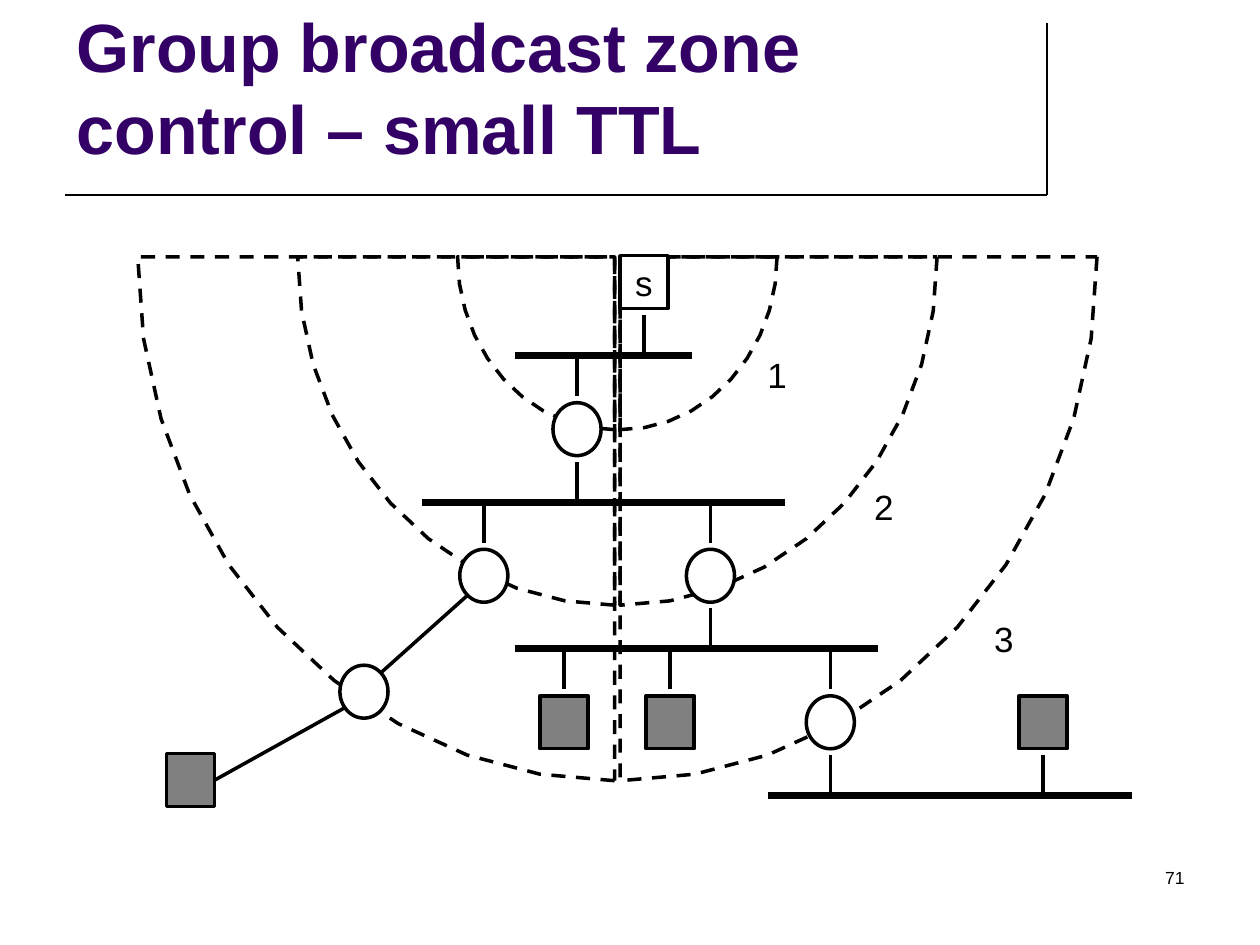
import math
import pptx
import pptx.util
import pptx.dml.color
import pptx.enum.dml
import pptx.enum.shapes
import pptx.enum.text
import pptx.oxml
import pptx.oxml.ns

Pt = pptx.util.Pt
RGB = pptx.dml.color.RGBColor
SHAPE = pptx.enum.shapes.MSO_SHAPE
ALIGN = pptx.enum.text.PP_ALIGN
ANCHOR = pptx.enum.text.MSO_ANCHOR
FIT = pptx.enum.text.MSO_AUTO_SIZE

BLACK = RGB(0x00, 0x00, 0x00)
WHITE = RGB(0xFF, 0xFF, 0xFF)
GRAY = RGB(0x80, 0x80, 0x80)
PURPLE = RGB(0x33, 0x00, 0x66)

NODE_W, NODE_H = 27.5, 30.25
BAR_TOP, STEP = 203.25, 83.75  # first network bar, gap between bars
DROP = 42                      # bar to node centre
NEAR, FAR = 1.5, 23.25         # ends of a stub, measured from its bar
CUTS = 10                      # straight pieces in a zone's arc

# Network bars: left, right
BARS = [(294.5, 395.25), (241, 448.5), (294.5, 502), (439, 646.75)]
# Stubs: x, bar index, direction (-1 up, 1 down)
STUBS = [(368, 0, -1), (329.75, 0, 1), (329.75, 1, -1), (276.5, 1, 1),
         (406, 1, 1), (406, 2, -1), (322.25, 2, 1), (383, 2, 1),
         (474.5, 2, 1), (474.5, 3, -1), (596, 3, -1)]
# Routers and hosts hanging below a bar: x, bar index
ROUTERS = [(329.75, 0), (276.5, 1), (406, 1), (474.5, 2)]
HOSTS = [(322.25, 2), (383, 2), (596, 2)]


def apply(obj, vals):
    for key, val in vals.items():
        setattr(obj, key, val)


def bar_y(row):
    return BAR_TOP + STEP * row


def write(shape, text, size, color=BLACK, bold=False, align=ALIGN.CENTER,
          **frame):
    box = shape.text_frame
    apply(box, {"text": text, **frame})
    para = box.paragraphs[0]
    para.alignment = align
    apply(para.font, {"name": "Arial", "size": Pt(size), "bold": bold})
    para.font.color.rgb = color


def label(slide, text, x, y, w, h, size, **form):
    box = slide.shapes.add_textbox(Pt(x), Pt(y), Pt(w), Pt(h))
    write(box, text, size, **form)


def wire(slide, x1, y1, x2, y2, width=2):
    line = slide.shapes.add_connector(
        pptx.enum.shapes.MSO_CONNECTOR.STRAIGHT,
        Pt(x1), Pt(y1), Pt(x2), Pt(y2))
    line.line.color.rgb = BLACK
    line.line.width = Pt(width)
    line._element.spPr.append(pptx.oxml.parse_xml(
        "<a:effectLst %s/>" % pptx.oxml.ns.nsdecls("a")))
    return line


def node(slide, kind, x, y, fill):
    shape = slide.shapes.add_shape(
        kind, Pt(x - NODE_W / 2), Pt(y - NODE_H / 2), Pt(NODE_W), Pt(NODE_H))
    shape.shadow.inherit = False
    shape.fill.solid()
    shape.fill.fore_color.rgb = fill
    shape.line.color.rgb = BLACK
    shape.line.width = Pt(2)
    return shape


def zone(slide, ring, side):
    """Dashed quarter sector; side is -1 for left, 1 for right."""
    x, y = 352.8 + 1.6 * side, 146.75
    wide, high = (91.4 * ring - 1.7) * side, 100.3 * ring - 1.5
    turns = [math.pi / 2 * i / CUTS for i in range(CUTS + 1)]
    arc = [(Pt(x + wide * math.cos(t)), Pt(y + high * math.sin(t)))
           for t in turns][::side]
    edge = slide.shapes.build_freeform(*arc[0], scale=1.0)
    edge.add_line_segments(arc[1:] + [(Pt(x), Pt(y))], close=True)
    shape = edge.convert_to_shape()
    shape.shadow.inherit = False
    shape.fill.background()
    shape.line.color.rgb = BLACK
    apply(shape.line, {"width": Pt(2),
                       "dash_style": pptx.enum.dml.MSO_LINE.DASH})


def main():
    deck = pptx.Presentation()
    apply(deck, {"slide_width": Pt(720), "slide_height": Pt(540)})
    slide = deck.slides.add_slide(deck.slide_layouts[5])

    # Title with its frame lines, and page number
    wire(slide, 598.5, 13, 598.5, 111.25, 1)
    wire(slide, 37, 111.25, 598.5, 111.25, 1)
    title = slide.shapes.title
    apply(title, {"left": Pt(36.5), "top": Pt(9), "width": Pt(561),
                  "height": Pt(90.75)})
    write(title, "Group broadcast zone control – small TTL", 39, PURPLE, True,
          ALIGN.LEFT, word_wrap=True, auto_size=FIT.NONE,
          vertical_anchor=ANCHOR.BOTTOM)
    label(slide, "71", 516.25, 491.75, 167.75, 36, 10, align=ALIGN.RIGHT,
          word_wrap=True)

    # TTL zones with their numbers
    for ring in (1, 2, 3):
        for side in (-1, 1):
            zone(slide, ring, side)
    for num, x in enumerate((444, 505, 573.5)):
        label(slide, str(num + 1), x - 12.5, 198.75 + 75.25 * num, 25, 31, 20,
              word_wrap=False)

    # Sender and hosts
    sender = node(slide, SHAPE.RECTANGLE, 368, bar_y(0) - DROP, WHITE)
    write(sender, "s", 20, word_wrap=False, vertical_anchor=ANCHOR.MIDDLE)
    for x, row in HOSTS:
        node(slide, SHAPE.RECTANGLE, x, bar_y(row) + DROP, GRAY)
    last = node(slide, SHAPE.RECTANGLE, 109, 445.75, GRAY)

    # Network bars, stubs and slanted links
    for row, (left, right) in enumerate(BARS):
        wire(slide, left, bar_y(row), right, bar_y(row), 4)
    for x, row, way in STUBS:
        wire(slide, x, bar_y(row) + way * NEAR, x, bar_y(row) + way * FAR)
    wire(slide, 278, 330.5, 207, 394)
    link = wire(slide, 209.5, 397.5, 123, 445.5)
    link.end_connect(last, 3)

    # Routers
    for x, row in ROUTERS:
        node(slide, SHAPE.OVAL, x, bar_y(row) + DROP, WHITE)
    node(slide, SHAPE.OVAL, 208, 395.25, WHITE)

    deck.save("out.pptx")


if __name__ == "__main__":
    main()
